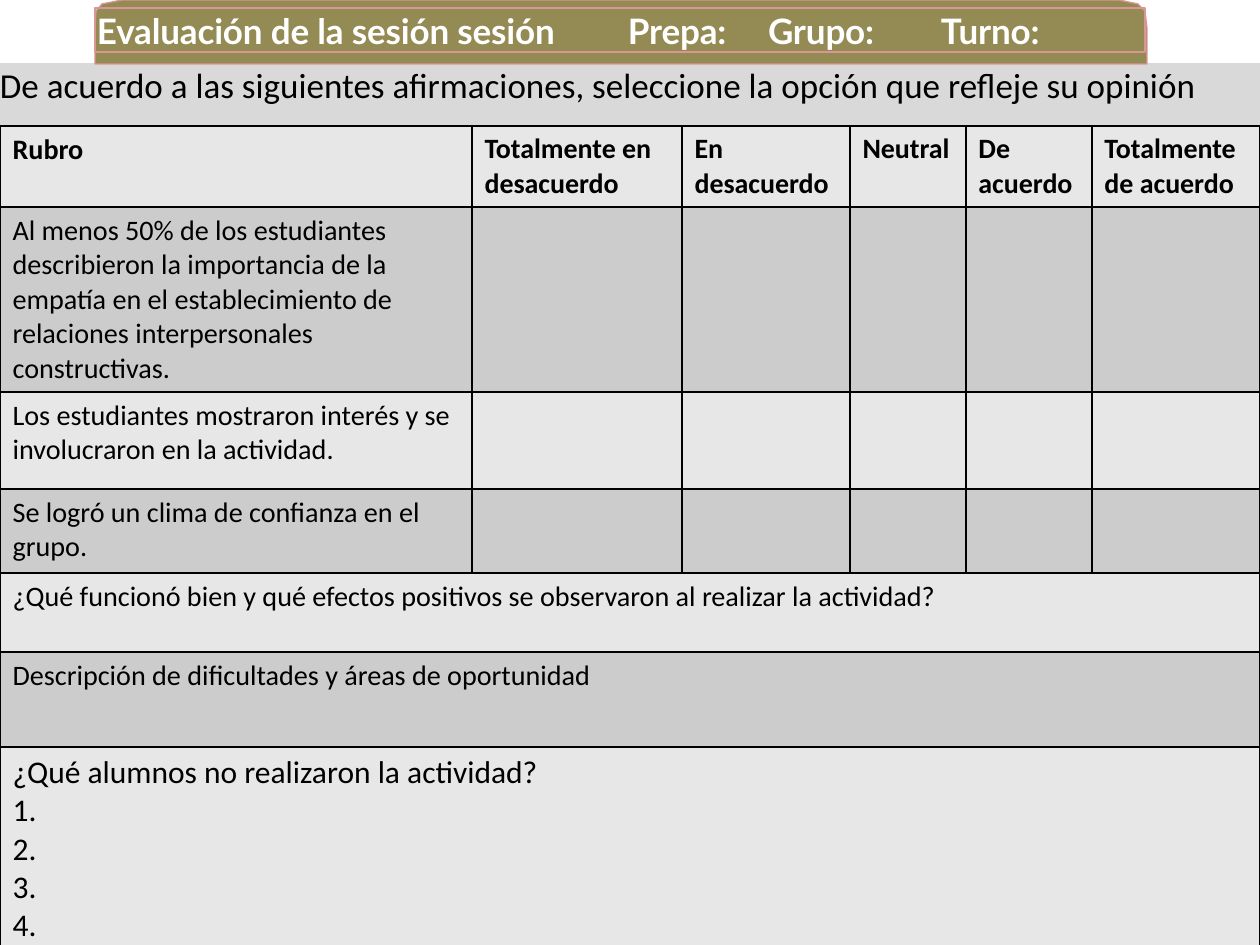
from lxml.etree import SubElement
from pptx import Presentation
from pptx.dml.color import RGBColor
from pptx.enum.shapes import MSO_SHAPE as Shape
from pptx.enum.text import MSO_ANCHOR as Anchor, PP_ALIGN as Align
from pptx.oxml import parse_xml
from pptx.oxml.ns import nsdecls, qn
from pptx.util import Emu, Pt

EMU_PER_PX = 914400 / 126
COLORS = {
    "panel": "D9D9D9", "banner": "948A54", "outline": "D99694",
    "light": "E7E7E7", "dark": "CCCCCC", "black": "000000", "white": "FFFFFF",
}
BANNER_OUTLINE = [
    (1081, 0), (160, 0), (122, 0), (102, 4), (96, 11), (95, 28), (95, 64),
    (1147, 64), (1147, 28), (1145, 11), (1138, 4), (1119, 0),
]
COLUMN_WIDTHS = [472, 210, 168, 116, 126, 168]
ROW_HEIGHTS = [80, 182, 97, 84, 79, 95, 201]
HEADINGS = ["Rubro", "Totalmente en desacuerdo", "En desacuerdo", "Neutral",
            "De acuerdo", "Totalmente de acuerdo"]
STATEMENTS = [
    "Al menos 50% de los estudiantes describieron la importancia de la empatía "
    "en el establecimiento de relaciones interpersonales constructivas.",
    "Los estudiantes mostraron interés y se involucraron en la actividad.",
    "Se logró un clima de confianza en el grupo.",
]
OPEN_QUESTIONS = [
    "¿Qué funcionó bien y qué efectos positivos se observaron al realizar la actividad?",
    "Descripción de dificultades y áreas de oportunidad",
    "¿Qué alumnos no realizaron la actividad?\n1.\n2.\n3.\n4.",
]


def px(length):
    return Emu(round(length * EMU_PER_PX))


def rgb(name):
    return RGBColor.from_string(COLORS[name])


class EvaluationSlide:
    body_font = "Calibri"
    title_font = "Lato"

    def __init__(self, presentation):
        self.slide = presentation.slides.add_slide(presentation.slide_layouts[6])

    def paint(self, shape, fill=None, line=None):
        shape.shadow.inherit = False
        if fill:
            shape.fill.solid()
            shape.fill.fore_color.rgb = rgb(fill)
        else:
            shape.fill.background()
        if line:
            shape.line.color.rgb = rgb(line)
            shape.line.width = Pt(0.75)
        else:
            shape.line.fill.background()

    def set_text(self, frame, text, size, color="black", bold=False, font=None):
        frame.text = text
        for paragraph in frame.paragraphs:
            paragraph.alignment = Align.LEFT
            paragraph.font.name = font or self.body_font
            paragraph.font.size = Pt(size)
            paragraph.font.bold = bold
            paragraph.font.color.rgb = rgb(color)

    def outline(self, points, fill, line):
        builder = self.slide.shapes.build_freeform(*points[0], scale=EMU_PER_PX)
        builder.add_line_segments(points[1:], close=True)
        self.paint(builder.convert_to_shape(), fill, line)

    def box(self, left, top, width, height, text, size, fill=None, line=None,
            inset_top=0, **style):
        shape = self.slide.shapes.add_shape(
            Shape.RECTANGLE, px(left), px(top), px(width), px(height))
        self.paint(shape, fill, line)
        frame = shape.text_frame
        frame.word_wrap = True
        frame.vertical_anchor = Anchor.TOP
        frame.margin_left = frame.margin_right = frame.margin_bottom = 0
        frame.margin_top = px(inset_top)
        self.set_text(frame, text, size, **style)
        return frame.paragraphs[0]

    def title(self, left, top, width, height, labels, tab_stops):
        paragraph = self.box(left, top, width, height, "\t".join(labels), 20,
                             line="outline", inset_top=2, color="white",
                             bold=True, font=self.title_font)
        paragraph.space_before = Pt(1.2)
        properties = paragraph.runs[0].font._element
        properties.set("spc", "-10")
        layout = paragraph._p.get_or_add_pPr()
        layout.set("marL", str(px(2)))
        tabs = parse_xml(f"<a:tabLst {nsdecls('a')}/>")
        for stop in tab_stops:
            SubElement(tabs, qn("a:tab"), pos=str(px(stop)), algn="l")
        layout.find(qn("a:defRPr")).addprevious(tabs)

    def cell(self, cell, fill, text="", size=16, bold=False):
        properties = cell._tc.get_or_add_tcPr()
        for side in ("lnL", "lnR", "lnT", "lnB"):
            properties.append(parse_xml(
                f'<a:{side} {nsdecls("a")} w="{Pt(1)}"><a:solidFill>'
                f'<a:srgbClr val="{COLORS["black"]}"/></a:solidFill></a:{side}>'))
        cell.fill.solid()
        cell.fill.fore_color.rgb = rgb(fill)
        if text:
            self.set_text(cell.text_frame, text, size, bold=bold)

    def rubric(self, left, top):
        """Headings, rated statements, then open questions across the full width."""
        rows = [HEADINGS] + [[text] for text in STATEMENTS + OPEN_QUESTIONS]
        last_column = len(COLUMN_WIDTHS) - 1
        table = self.slide.shapes.add_table(
            len(rows), len(COLUMN_WIDTHS), px(left), px(top),
            px(sum(COLUMN_WIDTHS)), px(sum(ROW_HEIGHTS))).table
        for column, width in zip(table.columns, COLUMN_WIDTHS):
            column.width = px(width)
        for r, (texts, height) in enumerate(zip(rows, ROW_HEIGHTS)):
            table.rows[r].height = px(height)
            if r > len(STATEMENTS):
                table.cell(r, 0).merge(table.cell(r, last_column))
            for c in range(last_column + 1):
                self.cell(table.cell(r, c), "dark" if r % 2 else "light",
                          texts[c] if c < len(texts) else "",
                          size=18 if r == len(rows) - 1 else 16 if r == 0 and c else 16.1,
                          bold=r == 0)


def main():
    presentation = Presentation()
    presentation.slide_width, presentation.slide_height = px(1260), px(945)
    evaluation = EvaluationSlide(presentation)
    evaluation.box(0, 63, 1260, 840,
                   "De acuerdo a las siguientes afirmaciones, seleccione la opción "
                   "que refleje su opinión", 20, fill="panel")
    evaluation.outline(BANNER_OUTLINE, "banner", "outline")
    evaluation.title(95, 8, 1050, 44,
                     ["Evaluación de la sesión sesión", "Prepa:", "Grupo:", "Turno:"],
                     [531, 671, 844])
    evaluation.rubric(0, 126)
    presentation.save("out.pptx")


if __name__ == "__main__":
    main()
